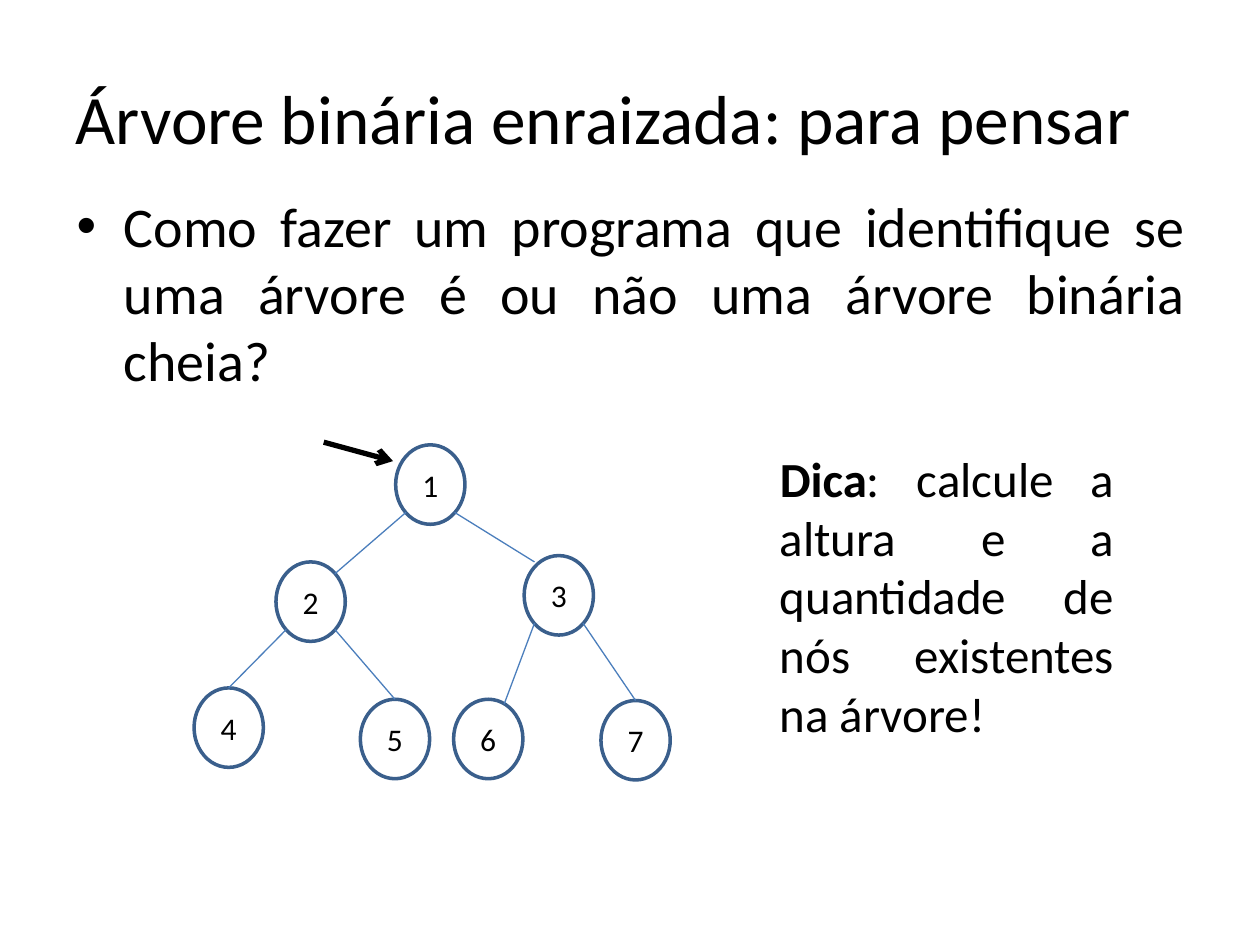
"""Build a slide about recognising a full binary tree."""
from lxml import etree
from pptx import Presentation, util as u
from pptx.dml.color import RGBColor
from pptx.enum import shapes, text
from pptx.oxml.ns import qn

BLACK = RGBColor(0x00, 0x00, 0x00)
NODE_LINE = RGBColor(0x3A, 0x5F, 0x8C)
EDGE_LINE = RGBColor(0x4B, 0x7E, 0xBC)
FONT = "Calibri"

TITLE = "Árvore binária enraizada: para pensar"
QUESTION = "Como fazer um programa que identifique se uma árvore é ou não uma árvore binária cheia?"
HINT = [("Dica", True), (": calcule a altura e a quantidade de nós existentes na árvore!", False)]

NODE_WIDTH, NODE_HEIGHT = 39.6, 45.4
NODES = {
    "1": (226.1, 254.2),
    "2": (157.7, 321.1),
    "3": (299.5, 317.5),
    "4": (110.9, 393.1),
    "5": (205.9, 399.6),
    "6": (259.2, 399.6),
    "7": (343.4, 400.3),
}

TOP, TOP_RIGHT = (0.5, 0), (0.85, 0.15)
BOTTOM_LEFT, BOTTOM_RIGHT = (0.15, 0.85), (0.85, 0.85)
EDGES = [
    ("1", BOTTOM_LEFT, "2", TOP_RIGHT),
    ("1", BOTTOM_RIGHT, "3", (0.15, 0.08)),
    ("2", BOTTOM_LEFT, "4", TOP),
    ("2", BOTTOM_RIGHT, "5", TOP),
    ("3", BOTTOM_LEFT, "6", (0.73, 0.06)),
    ("3", BOTTOM_RIGHT, "7", TOP),
]
ROOT_ARROW = ((185, 252.7), (224.6, 263.5))


def write(frame, runs, size, alignment, anchor):
    frame.word_wrap = True
    frame.auto_size = text.MSO_AUTO_SIZE.NONE
    frame.vertical_anchor = anchor
    paragraph = frame.paragraphs[0]
    paragraph.alignment = alignment
    for words, bold in runs:
        run = paragraph.add_run()
        run.text = words
        run.font.name = FONT
        run.font.size = u.Pt(size)
        run.font.bold = bold
        run.font.color.rgb = BLACK
    return paragraph


def add_text(slide, box, runs, size, anchor):
    shape = slide.shapes.add_textbox(*map(u.Pt, box))
    return write(shape.text_frame, runs, size, text.PP_ALIGN.JUSTIFY, anchor)


def add_bullet(paragraph, indent):
    properties = paragraph._p.get_or_add_pPr()
    properties.set("marL", str(u.Pt(indent)))
    properties.set("indent", str(u.Pt(-indent)))
    etree.SubElement(properties, qn("a:buFont"), typeface="Arial")
    etree.SubElement(properties, qn("a:buChar"), char="•")


def add_node(slide, label, position):
    left, top = position
    shape = slide.shapes.add_shape(
        shapes.MSO_SHAPE.OVAL, u.Pt(left), u.Pt(top), u.Pt(NODE_WIDTH), u.Pt(NODE_HEIGHT))
    shape.shadow.inherit = False
    shape.fill.background()
    shape.line.color.rgb = NODE_LINE
    shape.line.width = u.Pt(2)
    write(shape.text_frame, [(label, False)], 18, text.PP_ALIGN.CENTER, text.MSO_ANCHOR.MIDDLE)


def add_line(slide, start, end, color, width):
    connector = slide.shapes.add_connector(
        shapes.MSO_CONNECTOR.STRAIGHT, *map(u.Pt, (*start, *end)))
    connector.line.color.rgb = color
    connector.line.width = u.Pt(width)
    etree.SubElement(connector._element.spPr, qn("a:effectLst"))
    return connector


def node_point(label, fraction):
    left, top = NODES[label]
    return left + NODE_WIDTH * fraction[0], top + NODE_HEIGHT * fraction[1]


def main():
    presentation = Presentation()
    presentation.slide_width, presentation.slide_height = u.Pt(720), u.Pt(540)
    slide = presentation.slides.add_slide(presentation.slide_layouts[5])

    title = slide.shapes.title
    title.left, title.top, title.width, title.height = map(u.Pt, (36, 21.6, 648, 90))
    write(title.text_frame, [(TITLE, False)], 39.6, text.PP_ALIGN.LEFT, text.MSO_ANCHOR.MIDDLE)

    question = add_text(
        slide, (36.7, 105.8, 648, 136), [(QUESTION, False)], 32, text.MSO_ANCHOR.TOP)
    question.space_before = u.Pt(6.4)
    add_bullet(question, 27)

    for label, position in NODES.items():
        add_node(slide, label, position)
    for parent, parent_side, child, child_side in EDGES:
        add_line(slide, node_point(parent, parent_side), node_point(child, child_side),
                 EDGE_LINE, 0.75)

    arrow = add_line(slide, *ROOT_ARROW, BLACK, 3)
    etree.SubElement(arrow.line._get_or_add_ln(), qn("a:tailEnd"), type="arrow")

    add_text(slide, (438.5, 245.5, 205.2, 189.4), HINT, 28, text.MSO_ANCHOR.MIDDLE)
    presentation.save("out.pptx")


if __name__ == "__main__":
    main()
